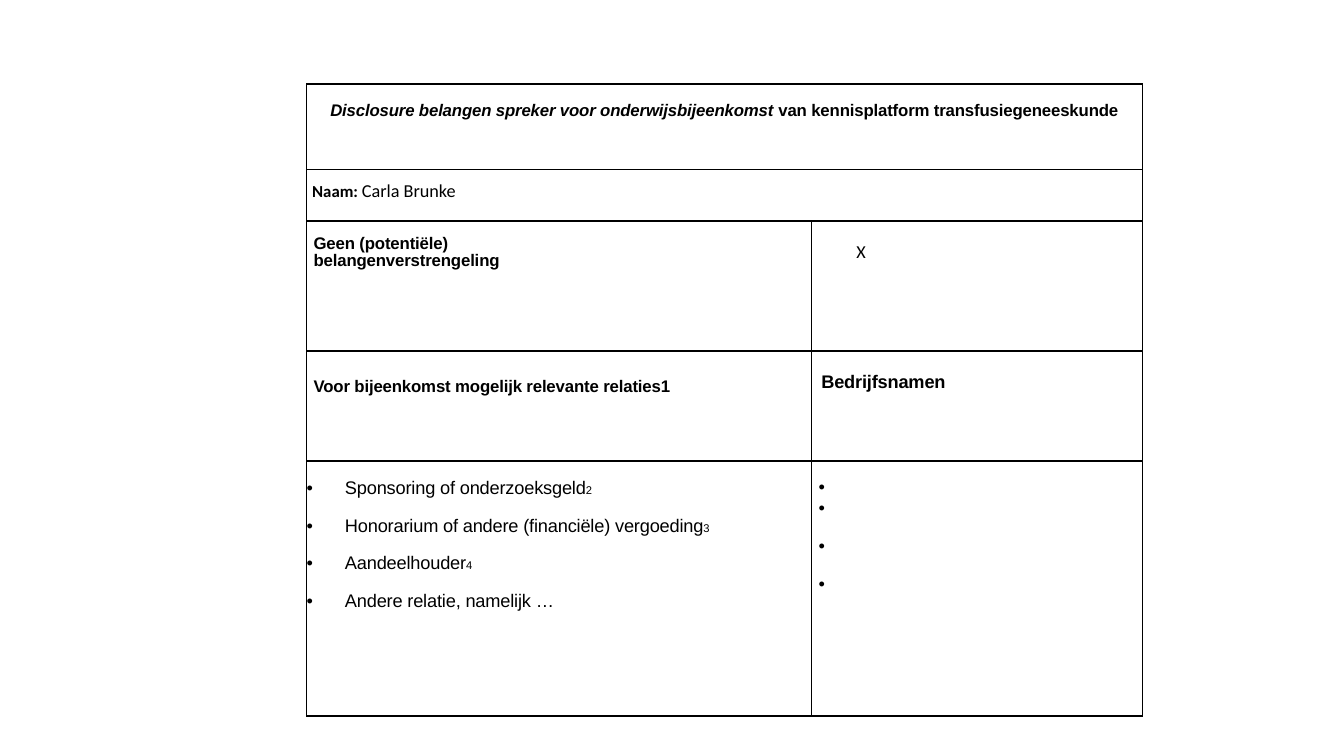
import pptx
import pptx.dml.color
import pptx.enum.text
import pptx.oxml
import pptx.oxml.ns
import pptx.util

Pt = pptx.util.Pt
COLORS = {"ink": "000000", "paper": "FFFFFF"}
COLUMN_WIDTHS = [360.7, 236.2]
ROW_HEIGHTS = [61.2, 36.7, 92.9, 78.5, 182.2]
DRAWING_NS = pptx.oxml.ns.nsdecls("a")


def rgb(name):
    return pptx.dml.color.RGBColor.from_string(COLORS[name])


def add_disclosure_table(slide):
    """Add the plain grid with thin black borders."""
    disclosure = slide.shapes.add_table(
        len(ROW_HEIGHTS), len(COLUMN_WIDTHS), Pt(219), Pt(60),
        Pt(sum(COLUMN_WIDTHS)), Pt(sum(ROW_HEIGHTS))).table
    disclosure.first_row = False
    disclosure.horz_banding = False
    for column, width in zip(disclosure.columns, COLUMN_WIDTHS):
        column.width = Pt(width)
    for row, height in zip(disclosure.rows, ROW_HEIGHTS):
        row.height = Pt(height)
        for cell in row.cells:
            style_cell(cell)
    return disclosure


def style_cell(cell):
    cell.margin_left = cell.margin_right = cell.margin_top = cell.margin_bottom = 0
    properties = cell._tc.get_or_add_tcPr()
    for side in "LRTB":
        properties.append(pptx.oxml.parse_xml(
            f'<a:ln{side} {DRAWING_NS} w="{Pt(1)}"><a:solidFill>'
            f'<a:srgbClr val="{COLORS["ink"]}"/></a:solidFill></a:ln{side}>'))
    cell.fill.solid()
    cell.fill.fore_color.rgb = rgb("paper")


def write(paragraph, runs, font="Arial", bold=None, line=None, before=None,
          bullet=False):
    """Fill a paragraph with (text, size, font settings) runs."""
    if bullet:
        properties = paragraph._p.get_or_add_pPr()
        properties.set("marL", str(Pt(27.4)))
        properties.set("indent", str(-Pt(27.4)))
        properties.append(pptx.oxml.parse_xml(
            f'<a:buFont {DRAWING_NS} typeface="Arial"/>'))
        properties.append(pptx.oxml.parse_xml(f'<a:buChar {DRAWING_NS} char="•"/>'))
    if line is not None:
        paragraph.line_spacing = line
    if before is not None:
        paragraph.space_before = Pt(before)
    paragraph.font.name = font
    paragraph.font.color.rgb = rgb("ink")
    if bold is not None:
        paragraph.font.bold = bold
    sizes = {size for _, size, _ in runs}
    if len(sizes) == 1:
        paragraph.font.size = Pt(sizes.pop())
    for text, size, settings in runs:
        run = paragraph.add_run()
        run.text = text
        if paragraph.font.size is None:
            run.font.size = Pt(size)
        for setting, value in settings.items():
            setattr(run.font, setting, value)
        if font == "Arial" and len(text) > 1:
            run._r.get_or_add_rPr().set("spc", "-10")


def write_cell(cell, runs, top, left=0, right=0, **style):
    cell.margin_top, cell.margin_left, cell.margin_right = Pt(top), Pt(left), Pt(right)
    write(cell.text_frame.paragraphs[0], runs, **style)


def write_list(cell, items):
    """Write one paragraph per (runs, style) item."""
    frame = cell.text_frame
    for number, (runs, style) in enumerate(items):
        paragraph = frame.add_paragraph() if number else frame.paragraphs[0]
        write(paragraph, runs, **style)


def main():
    deck = pptx.Presentation()
    deck.slide_width, deck.slide_height = Pt(960), Pt(540)
    slide = deck.slides.add_slide(deck.slide_layouts[6])
    disclosure = add_disclosure_table(slide)
    cell = disclosure.cell

    # Title and speaker across both columns
    for row in (0, 1):
        cell(row, 0).merge(cell(row, 1))
    write_cell(cell(0, 0), [
        ("Disclosure belangen spreker voor onderwijsbijeenkomst ", 12, {"italic": True}),
        ("van kennisplatform transfusiegeneeskunde", 12, {})], top=12.3, bold=True)
    cell(0, 0).text_frame.paragraphs[0].alignment = pptx.enum.text.PP_ALIGN.CENTER
    write_cell(cell(1, 0), [("Naam: ", 12, {"bold": True}), ("Carla Brunke", 13, {})],
               top=7.3, left=4, font="Calibri")

    # No conflict of interest
    write_cell(cell(2, 0), [("Geen (potentiële) belangenverstrengeling", 12, {})],
               top=10, left=5, right=170, bold=True, line=0.94)
    write_cell(cell(2, 1), [("X", 13, {})], top=14.6, left=32, font="Calibri")

    # Headings of the relations
    write_cell(cell(3, 0), [("Voor bijeenkomst mogelijk relevante relaties1", 12, {})],
               top=7, left=5, bold=True, line=Pt(25.3))
    write_cell(cell(3, 1), [("Bedrijfsnamen", 13, {})],
               top=19.2, left=7, bold=True, line=Pt(10))

    # Relations with their note numbers
    relations = [("Sponsoring of onderzoeksgeld", "2", 26.9, None),
                 ("Honorarium of andere (financiële) vergoeding", "3", 25.3, 1.6),
                 ("Aandeelhouder", "4", 26.4, None),
                 ("Andere relatie, namelijk …", "", 26.9, None)]
    write_list(cell(4, 0), [
        ([(name, 13, {})] + ([(note, 8, {})] if note else []),
         {"line": Pt(line), "before": before, "bullet": True})
        for name, note, line, before in relations])

    # Company names left open
    cell(4, 1).margin_top, cell(4, 1).margin_left = Pt(11.5), Pt(5)
    openings = [{}, {"before": 0.1}, {"before": 13}, {"line": Pt(26.9)}]
    write_list(cell(4, 1), [([("•", 13, {})], style) for style in openings])

    deck.save("out.pptx")


if __name__ == "__main__":
    main()
